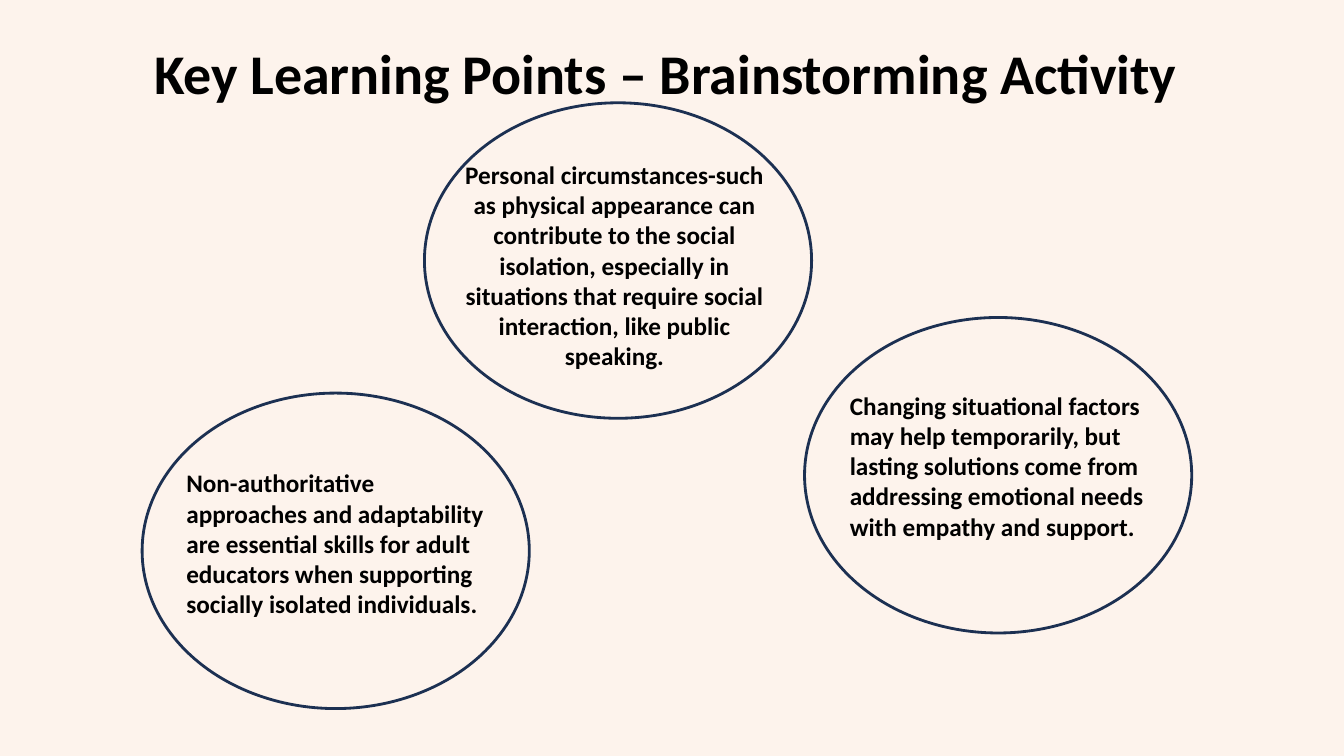
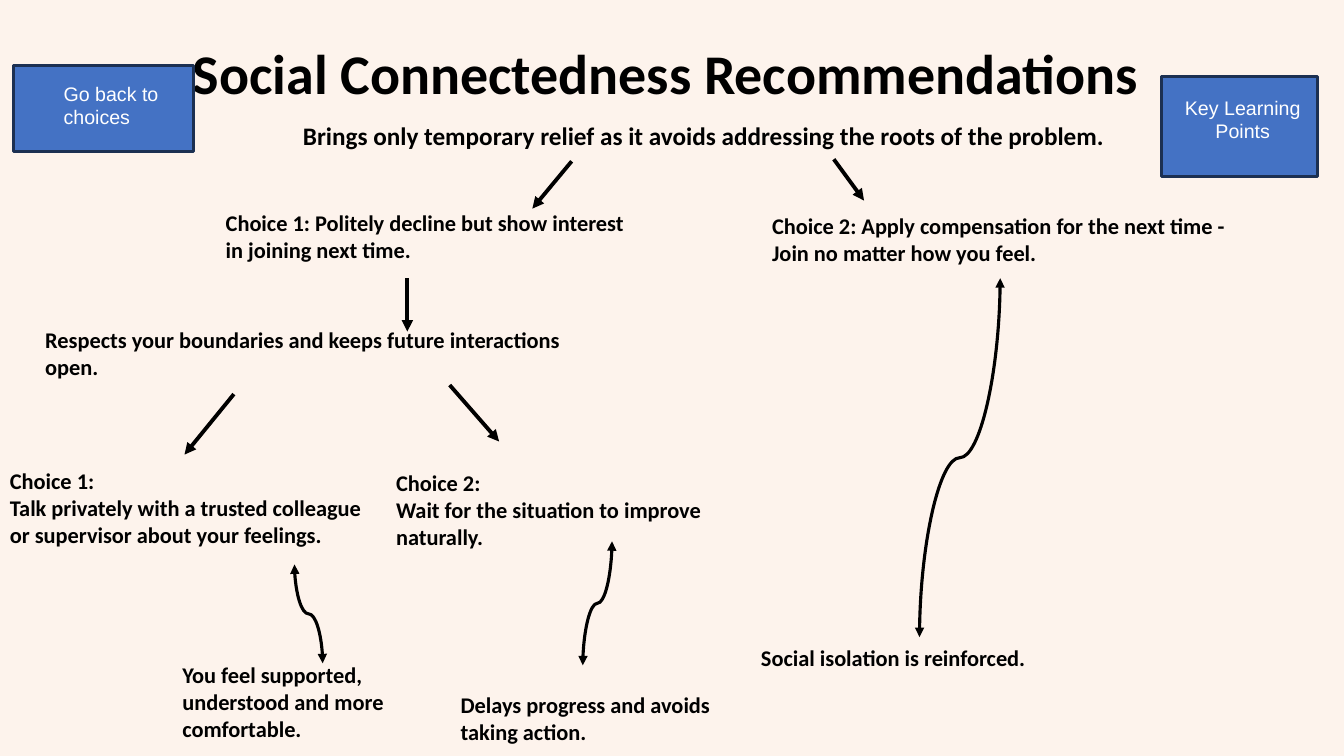
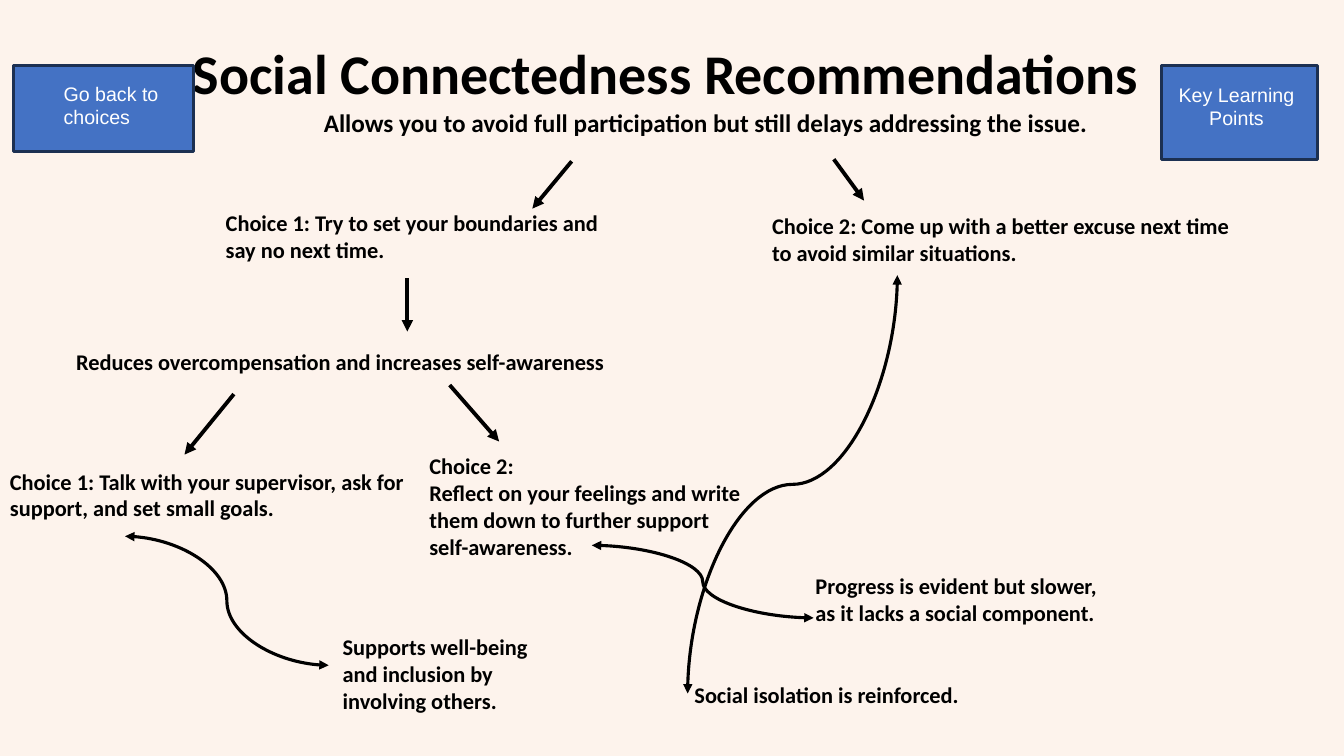
from lxml import etree
from pptx import Presentation, util as u
from pptx.dml.color import RGBColor
from pptx.enum import shapes, text
from pptx.oxml.ns import qn

WIDTH, HEIGHT = 13.33, 7.5
CREAM, BLUE, NAVY, BLACK, WHITE = "FDF3EC", "4472C4", "1C3052", "000000", "FFFFFF"
LEFT, CENTER = text.PP_ALIGN.LEFT, text.PP_ALIGN.CENTER
LINE_RATIO = 1.22 / 72  # inches of line height per point of type
PAD_X, PAD_Y = 0.1, 0.05
OVAL_WIDTH, OVAL_HEIGHT = 3.84, 3.13

# oval left, top; text offset from the oval; lines; alignment; wording
BRAINSTORM = [
    (4.21, 1.02, 0.3, 0.51, 7, CENTER,
     "Personal circumstances-such as physical appearance can contribute to the social "
     "isolation, especially in situations that require social interaction, like public speaking."),
    (1.41, 3.9, 0.34, 0.69, 5, LEFT,
     "Non-authoritative approaches and adaptability are essential skills for adult educators "
     "when supporting socially isolated individuals."),
    (7.98, 3.15, 0.35, 0.67, 5, LEFT,
     "Changing situational factors may help temporarily, but lasting solutions come from "
     "addressing emotional needs with empathy and support."),
]

# arrows found on every decision tree: from x, y to x, y
TREE_ARROWS = [
    (5.67, 1.6, 5.28, 2.07), (8.27, 1.58, 8.57, 1.99), (4.04, 2.76, 4.04, 3.29),
    (2.32, 3.91, 1.83, 4.51), (4.46, 3.82, 4.95, 4.38),
]
# left, top, width, height; text insets left, top, right; alignment; wording
BACK_BUTTON = (0.13, 0.65, 1.79, 0.85, 0.5, 0.16, 0.19, LEFT, "Go back to choices")

# labels: left, top, width, lines, size, alignment, wording
# curves: left end x, y, right end x, y, whether the curve leaves its ends vertically
TREES = [
    {
        "labels": [
            (1.34, 1.14, 11.28, 1, 18, CENTER,
             "Brings only temporary relief as it avoids addressing the roots of the problem."),
            (2.14, 2.03, 4.15, 2, 16, LEFT,
             "Choice 1: Politely decline but show interest in joining next time."),
            (7.56, 2.06, 4.83, 2, 16, LEFT,
             "Choice 2: Apply compensation for the next time - Join no matter how you feel."),
            (0.35, 3.19, 5.53, 2, 16, LEFT,
             "Respects your boundaries and keeps future interactions open."),
            (0, 4.59, 3.84, 3, 16, LEFT,
             "Choice 1:\nTalk privately with a trusted colleague or supervisor about your feelings."),
            (3.83, 4.61, 3.41, 3, 16, LEFT,
             "Choice 2:\nWait for the situation to improve naturally."),
            (1.71, 6.51, 2.69, 3, 16, LEFT,
             "You feel supported, understood and more comfortable."),
            (4.47, 6.81, 2.92, 2, 16, LEFT, "Delays progress and avoids taking action."),
            (5.93, 6.34, 5.86, 1, 16, CENTER, "Social isolation is reinforced."),
        ],
        "curves": [
            (9.12, 6.32, 9.92, 2.76, True),
            (5.78, 6.6, 6.07, 5.37, True),
            (2.92, 5.6, 3.2, 6.58, True),
        ],
        "button": (11.52, 0.76, 1.55, 0.99, 0.16, 0.19, 0.1, CENTER, "Key Learning Points"),
    },
    {
        "labels": [
            (1.36, 1.02, 11.28, 1, 18, CENTER,
             "Allows you to avoid full participation but still delays addressing the issue."),
            (2.14, 2.03, 4.15, 2, 16, LEFT,
             "Choice 1: Try to set your boundaries and say no next time."),
            (7.56, 2.06, 4.83, 2, 16, LEFT,
             "Choice 2: Come up with a better excuse next time to avoid similar situations."),
            (0.61, 3.4, 5.53, 1, 16, CENTER,
             "Reduces overcompensation and increases self-awareness"),
            (0, 4.59, 4.25, 2, 16, LEFT,
             "Choice 1: Talk with your supervisor, ask for support, and set small goals."),
            (4.16, 4.44, 3.41, 4, 16, LEFT,
             "Choice 2:\nReflect on your feelings and write them down to further support "
             "self-awareness."),
            (3.3, 6.23, 2.39, 3, 16, LEFT,
             "Supports well-being and inclusion by involving others."),
            (7.99, 5.63, 3.14, 2, 16, LEFT,
             "Progress is evident but slower, as it lacks a social component."),
            (5.27, 6.71, 5.86, 1, 16, CENTER, "Social isolation is reinforced."),
        ],
        "curves": [
            (5.87, 5.41, 8.07, 6.13, False),
            (1.24, 5.32, 3.26, 6.6, False),
            (6.82, 6.88, 8.9, 2.73, True),
        ],
        "button": (11.52, 0.65, 1.55, 0.93, 0.1, 0.17, 0.16, CENTER, "Key Learning Points"),
    },
]


def rgb(value):
    return RGBColor.from_string(value)


def inches(*lengths):
    return [u.Inches(length) for length in lengths]


def write(shape, wording, size, align, font="Calibri", color=BLACK, bold=True,
          insets=(PAD_X, PAD_Y, PAD_X), spacing=None):
    frame = shape.text_frame
    frame.word_wrap = True
    frame.vertical_anchor = text.MSO_ANCHOR.TOP
    frame.margin_left, frame.margin_top, frame.margin_right = inches(*insets)
    frame.text = wording
    for para in frame.paragraphs:
        para.alignment = align
        para.line_spacing = spacing
        for span in para.runs:
            span.font.name, span.font.size, span.font.bold = font, u.Pt(size), bold
            span.font.color.rgb = rgb(color)


def add_label(page, left, top, width, lines, size, align, wording, spacing=None):
    height = lines * size * LINE_RATIO * (spacing or 1) + 2 * PAD_Y
    box = page.shapes.add_textbox(*inches(left, top, width, height))
    write(box, wording, size, align, spacing=spacing)


def add_outlined(page, kind, left, top, width, height, fill=None):
    shape = page.shapes.add_shape(kind, *inches(left, top, width, height))
    shape.shadow.inherit = False
    if fill:
        shape.fill.solid()
        shape.fill.fore_color.rgb = rgb(fill)
    else:
        shape.fill.background()
    shape.line.color.rgb = rgb(NAVY)
    shape.line.width = u.Pt(2)
    return shape


def add_button(page, left, top, width, height, inset_left, inset_top, inset_right, align, wording):
    button = add_outlined(page, shapes.MSO_SHAPE.RECTANGLE, left, top, width, height, BLUE)
    write(button, wording, 14, align, "Arial", WHITE, False,
          (inset_left, inset_top, inset_right))


def add_arrow(page, kind, ends, weight, heads):
    arrow = page.shapes.add_connector(kind, *inches(*ends))
    arrow.line.color.rgb = rgb(BLACK)
    arrow.line.width = u.Pt(weight)
    for head in heads:
        etree.SubElement(arrow.line._get_or_add_ln(), qn(head), type="triangle")
    etree.SubElement(arrow._element.spPr, qn("a:effectLst"))
    return arrow


def add_curve(page, x1, y1, x2, y2, vertical):
    """Draw a two-headed S curve; a vertical one is a level curve turned by 270 degrees."""
    ends = (x1, y1, x2, y2)
    if vertical:
        mid_x, mid_y = (x1 + x2) / 2, (y1 + y2) / 2
        half_length, half_depth = (y1 - y2) / 2, (x2 - x1) / 2
        ends = (mid_x - half_length, mid_y - half_depth,
                mid_x + half_length, mid_y + half_depth)
    curve = add_arrow(page, shapes.MSO_CONNECTOR.CURVE, ends, 2.25,
                      ("a:headEnd", "a:tailEnd"))
    if vertical:
        curve._element.spPr.xfrm.set("rot", str(270 * 60000))


def add_page(deck, title):
    page = deck.slides.add_slide(deck.slide_layouts[6])
    add_label(page, 0, 0, WIDTH - 0.13, 1, 40, CENTER, title, spacing=1.5)
    return page


def add_brainstorm(deck):
    page = add_page(deck, "Key Learning Points – Brainstorming Activity")
    for left, top, shift_x, shift_y, lines, align, wording in BRAINSTORM:
        add_outlined(page, shapes.MSO_SHAPE.OVAL, left, top, OVAL_WIDTH, OVAL_HEIGHT)
        add_label(page, left + shift_x, top + shift_y, 3.17, lines, 18, align, wording)


def add_tree(deck, tree):
    page = add_page(deck, "Social Connectedness Recommendations")
    for label in tree["labels"]:
        add_label(page, *label)
    for ends in TREE_ARROWS:
        add_arrow(page, shapes.MSO_CONNECTOR.STRAIGHT, ends, 2.75, ("a:tailEnd",))
    for curve in tree["curves"]:
        add_curve(page, *curve)
    for button in (tree["button"], BACK_BUTTON):
        add_button(page, *button)


def main():
    deck = Presentation()
    deck.slide_width, deck.slide_height = inches(WIDTH, HEIGHT)
    backdrop = deck.slide_master.background.fill
    backdrop.solid()
    backdrop.fore_color.rgb = rgb(CREAM)
    add_brainstorm(deck)
    for tree in TREES:
        add_tree(deck, tree)
    deck.save("out.pptx")


if __name__ == "__main__":
    main()
